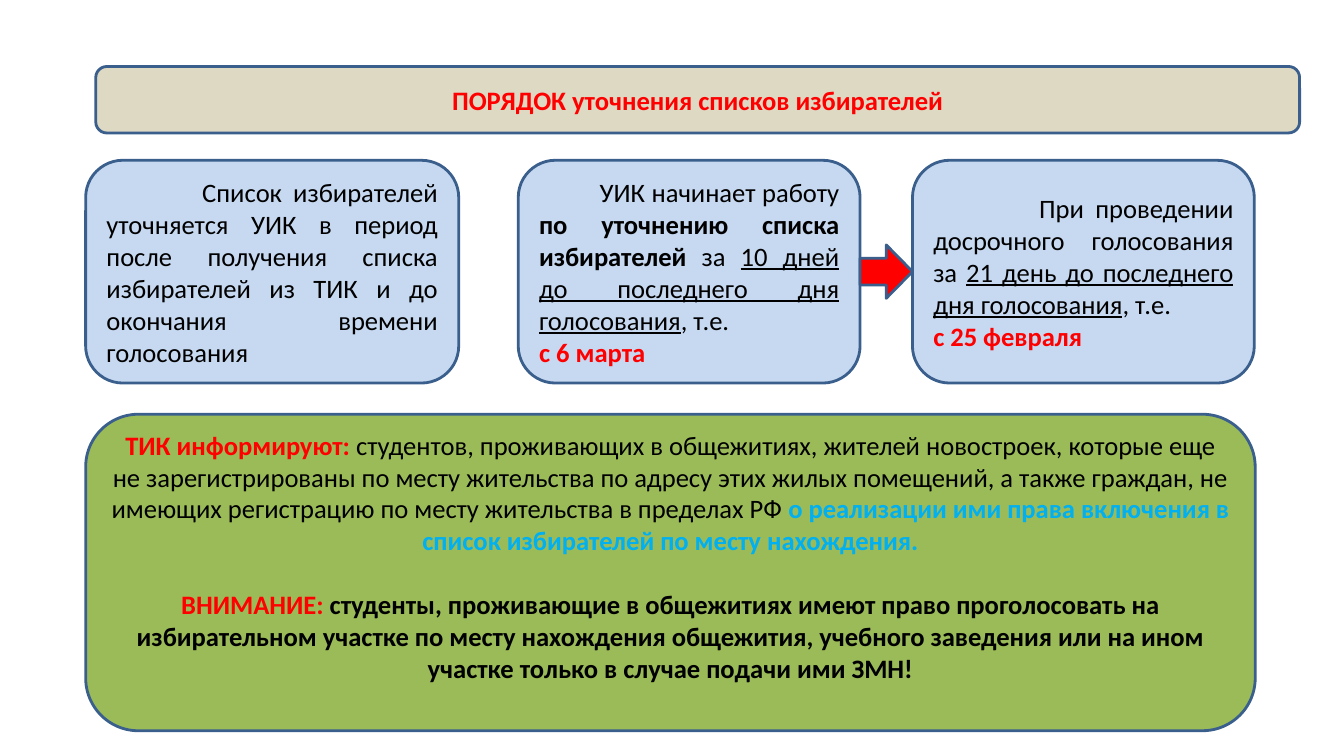
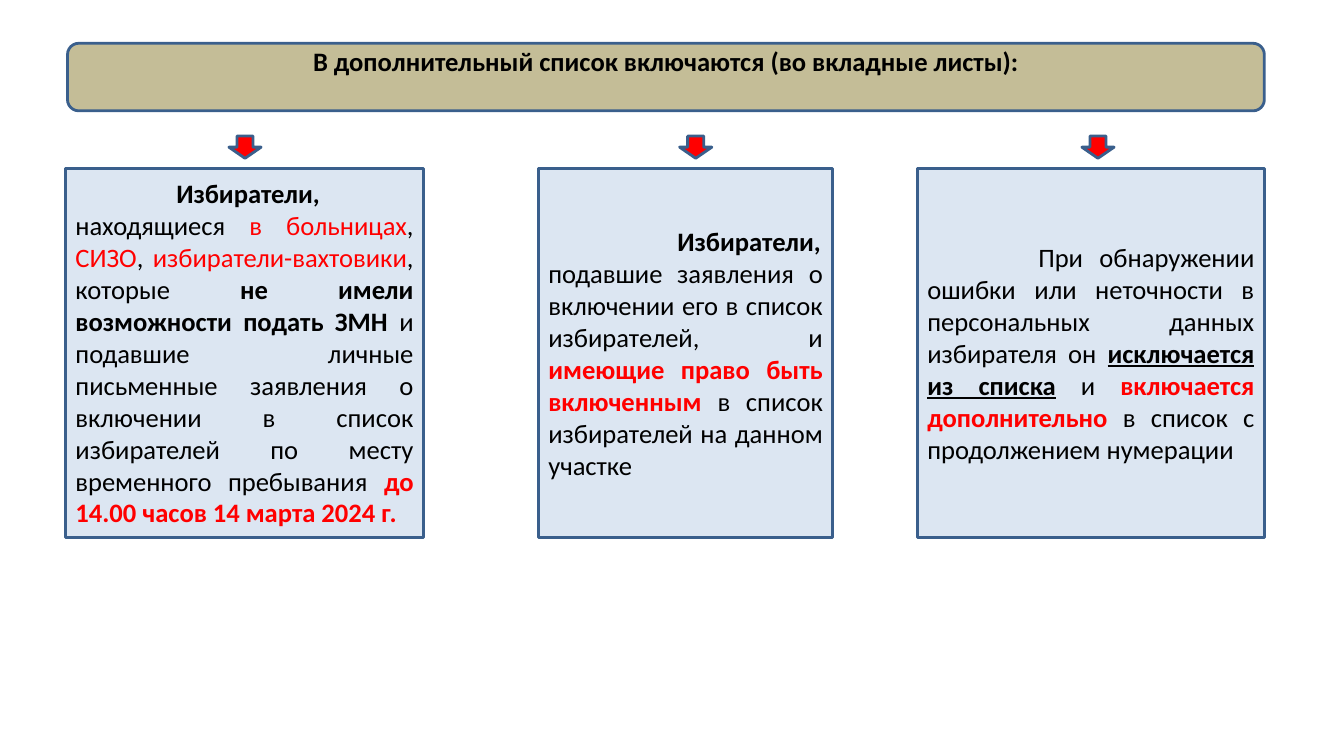
import pptx
import pptx.util
import pptx.dml.color
import pptx.enum.shapes
import pptx.enum.text

Inches = pptx.util.Inches
SHAPES = pptx.enum.shapes.MSO_SHAPE
ALIGN = pptx.enum.text.PP_ALIGN
ANCHOR = pptx.enum.text.MSO_ANCHOR

BLACK, RED, CYAN = "000000", "FF0000", "00B0F0"
OUTLINE = "3A5F8C"
LINE_HEIGHT = 0.32
BASE_FONT = {"name": "Calibri", "size": pptx.util.Pt(19), "bold": False, "underline": False}

PLAIN = (BLACK, {})
BOLD = (BLACK, {"bold": True})
UNDERLINED = (BLACK, {"underline": True})
BOLD_UNDERLINED = (BLACK, {"bold": True, "underline": True})
RED_PLAIN = (RED, {})
RED_BOLD = (RED, {"bold": True})
CYAN_BOLD = (CYAN, {"bold": True})

PERIOD_CARDS = [
    (0.85, 3.7, 0.95, [
        [("Список избирателей уточняется УИК в период после получения списка "
          "избирателей из ТИК и до окончания времени голосования", PLAIN)],
    ]),
    (5.14, 3.39, 0.6, [
        [("УИК начинает работу ", PLAIN),
         ("по уточнению списка избирателей ", BOLD),
         ("за ", PLAIN),
         ("10 дней до последнего дня голосования", UNDERLINED),
         (", т.е.", PLAIN)],
        [("с 6 марта", RED_BOLD)],
    ]),
    (9.05, 3.39, 1.05, [
        [("При проведении досрочного голосования за ", PLAIN),
         ("21 день до последнего дня голосования", UNDERLINED),
         (", т.е.", PLAIN)],
        [("с 25 февраля", RED_BOLD)],
    ]),
]

NOTICE = [
    [("ТИК информируют: ", RED_BOLD),
     ("студентов, проживающих в общежитиях, жителей новостроек, которые еще не "
      "зарегистрированы по месту жительства по адресу этих жилых помещений, а также "
      "граждан, не имеющих регистрацию по месту жительства в пределах РФ ", PLAIN),
     ("о реализации ими права включения в список избирателей по месту нахождения.", CYAN_BOLD)],
    [("ВНИМАНИЕ: ", RED_BOLD),
     ("студенты, проживающие в общежитиях имеют право проголосовать на избирательном "
      "участке по месту нахождения общежития, учебного заведения или на ином участке "
      "только в случае подачи ими ЗМН!", BOLD)],
]

VOTER_CARDS = [
    (0.65, 3.55, 2.27, 1, [
        [("Избиратели,", BOLD),
         (" находящиеся ", PLAIN),
         ("в больницах", RED_PLAIN),
         (", ", PLAIN),
         ("СИЗО", RED_PLAIN),
         (", ", PLAIN),
         ("избиратели-вахтовики", RED_PLAIN),
         (", которые ", PLAIN),
         ("не имели возможности подать ЗМН ", BOLD),
         ("и подавшие личные письменные заявления о включении в список избирателей "
          "по месту временного пребывания ", PLAIN),
         ("до 14.00 часов 14 марта 2024 г.", RED_BOLD)],
    ]),
    (5.34, 2.92, 6.74, 1.28, [
        [("Избиратели, ", BOLD),
         ("подавшие заявления о включении его в список избирателей, и ", PLAIN),
         ("имеющие право быть включенным ", RED_BOLD),
         ("в список избирателей на данном участке", PLAIN)],
    ]),
    (9.1, 3.44, 10.73, 1.1, [
        [("При обнаружении ошибки или неточности в персональных данных избирателя он ", PLAIN),
         ("исключается из списка", BOLD_UNDERLINED),
         (" и ", PLAIN),
         ("включается дополнительно ", RED_BOLD),
         ("в список с продолжением нумерации", PLAIN)],
    ]),
]


def color(hex_value):
    return pptx.dml.color.RGBColor.from_string(hex_value)


def set_attributes(target, values):
    for name, value in values.items():
        setattr(target, name, value)


def add_box(slide, kind, box, fill):
    shape = slide.shapes.add_shape(kind, *(Inches(length) for length in box))
    shape.shadow.inherit = False
    shape.fill.solid()
    shape.fill.fore_color.rgb = color(fill)
    shape.line.color.rgb = color(OUTLINE)
    shape.line.width = pptx.util.Pt(2)
    return shape


def write_text(shape, paragraphs, align, indent=0, gap=0, bottom=0.05):
    frame = shape.text_frame
    set_attributes(frame, {
        "word_wrap": True,
        "vertical_anchor": ANCHOR.MIDDLE,
        "margin_bottom": Inches(bottom),
    })
    for index, runs in enumerate(paragraphs):
        paragraph = frame.add_paragraph() if index else frame.paragraphs[0]
        paragraph.alignment = align
        if index:
            paragraph.space_before = Inches(gap)
        elif indent:
            paragraph._p.get_or_add_pPr().set("indent", str(Inches(indent)))
        for text, (text_color, style) in runs:
            run = paragraph.add_run()
            run.text = text
            set_attributes(run.font, {**BASE_FONT, **style})
            run.font.color.rgb = color(text_color)


def add_title_band(slide, box, fill, text, style, bottom=0.05):
    band = add_box(slide, SHAPES.ROUNDED_RECTANGLE, box, fill)
    write_text(band, [[(text, style)]], ALIGN.CENTER, bottom=bottom)


def add_card(slide, kind, box, fill, paragraphs, indent):
    card = add_box(slide, kind, box, fill)
    write_text(card, paragraphs, ALIGN.JUSTIFY, indent)


def add_period_row(slide, top, height):
    for left, width, indent, paragraphs in PERIOD_CARDS:
        add_card(slide, SHAPES.ROUNDED_RECTANGLE, (left, top, width, height),
                 "C6D9F1", paragraphs, indent)
    start = PERIOD_CARDS[1][0] + PERIOD_CARDS[1][1]
    end = PERIOD_CARDS[2][0]
    arrow_height = 0.53
    arrow_top = top + (height - arrow_height) / 2
    add_box(slide, SHAPES.RIGHT_ARROW, (start, arrow_top, end - start, arrow_height), RED)


def add_notice(slide, box):
    notice = add_box(slide, SHAPES.ROUNDED_RECTANGLE, box, "9BBB59")
    write_text(notice, NOTICE, ALIGN.CENTER, gap=LINE_HEIGHT, bottom=0.05 + LINE_HEIGHT)


def add_voter_row(slide, top, height):
    for left, width, arrow_left, indent, paragraphs in VOTER_CARDS:
        add_card(slide, SHAPES.RECTANGLE, (left, top, width, height),
                 "DCE6F2", paragraphs, indent)
        add_box(slide, SHAPES.DOWN_ARROW, (arrow_left, top - LINE_HEIGHT, 0.32, 0.22), RED)


def build_update_slide(slide):
    add_title_band(slide, (0.95, 0.66, 11.94, 0.66), "DDD9C3",
                   "ПОРЯДОК уточнения списков избирателей", RED_BOLD)
    add_period_row(slide, 1.59, 2.21)
    add_notice(slide, (0.85, 4.11, 11.6, 3.14))


def build_additional_list_slide(slide):
    add_title_band(slide, (0.67, 0.43, 11.87, 0.67), "C4BD97",
                   "В дополнительный список включаются (во вкладные листы):", BOLD,
                   bottom=0.05 + LINE_HEIGHT)
    add_voter_row(slide, 1.67, 3.66)


def main():
    presentation = pptx.Presentation()
    presentation.slide_width = Inches(13.33)
    presentation.slide_height = Inches(7.5)
    for build in (build_update_slide, build_additional_list_slide):
        build(presentation.slides.add_slide(presentation.slide_layouts[6]))
    presentation.save("out.pptx")


if __name__ == "__main__":
    main()
